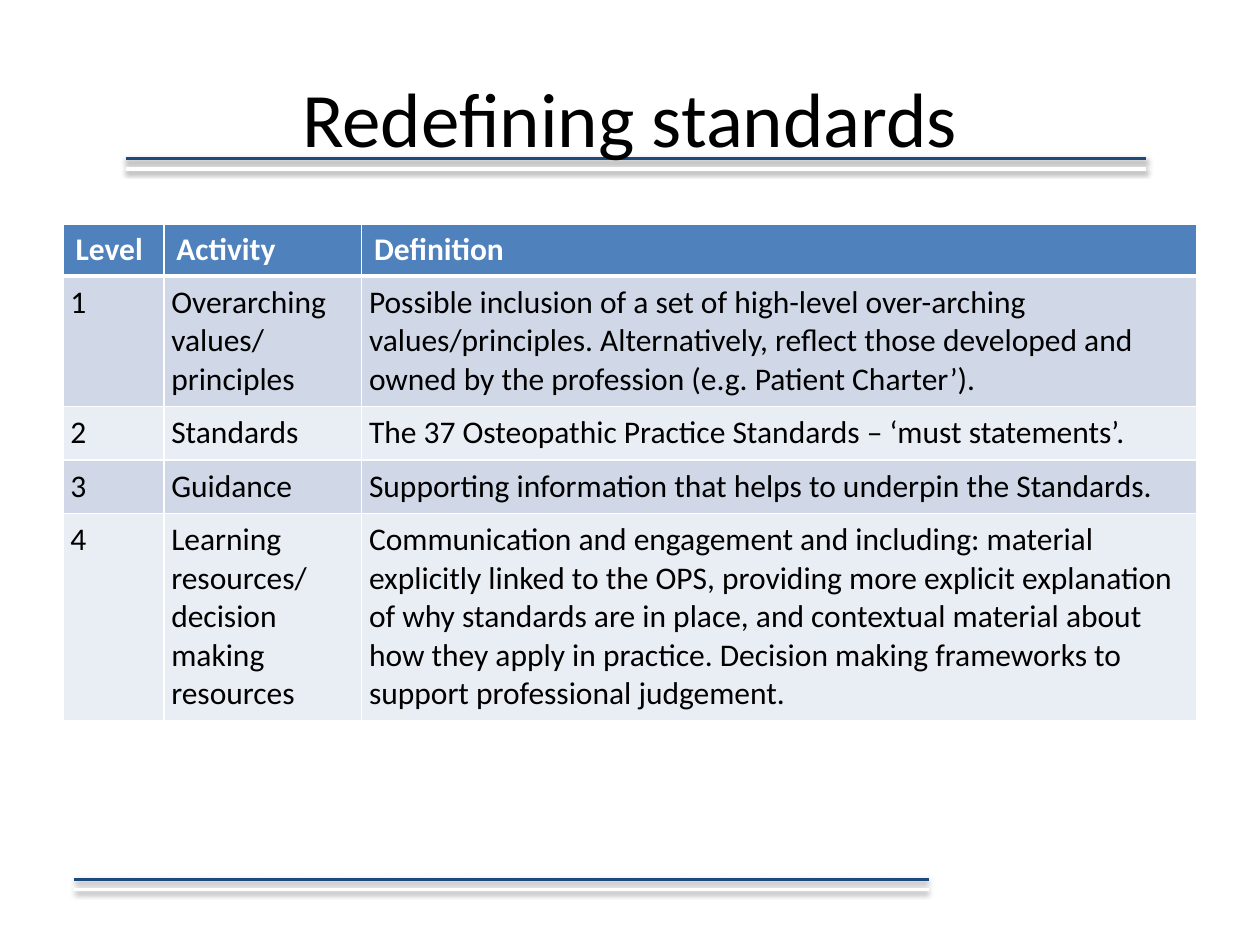
from pptx import Presentation
from pptx.dml.color import RGBColor
from pptx.enum.shapes import MSO_CONNECTOR
from pptx.enum.text import MSO_ANCHOR, PP_ALIGN
from pptx.oxml import parse_xml
from pptx.oxml.ns import nsdecls
from pptx.util import Pt

COLORS = {
    "navy": "1F497D",
    "header": "4F81BD",
    "odd_row": "D0D8E8",
    "even_row": "E9EDF4",
    "white": "FFFFFF",
    "black": "000000",
}
FONT = "Calibri"
RULE_GAP = 5.8
COLUMN_WIDTHS = [57.6, 113, 477.4]
ROW_HEIGHTS = [29.5, 74, 30, 30, 116]
ROWS = [
    ["Level", "Activity", "Definition"],
    ["1", "Overarching values/\nprinciples",
     "Possible inclusion of a set of high-level over-arching values/principles. "
     "Alternatively, reflect those developed and owned by the profession "
     "(e.g. Patient Charter’)."],
    ["2", "Standards", "The 37 Osteopathic Practice Standards – ‘must statements’."],
    ["3", "Guidance", "Supporting information that helps to underpin the Standards."],
    ["4", "Learning resources/ decision making resources",
     "Communication and engagement and including: material explicitly linked to "
     "the OPS, providing more explicit explanation of why standards are in place, "
     "and contextual material about how they apply in practice. Decision making "
     "frameworks to support professional judgement."],
]


def rgb(name):
    return RGBColor.from_string(COLORS[name])


def set_font(p, size, color, bold=False):
    p.font.name = FONT
    p.font.size = Pt(size)
    p.font.bold = bold
    p.font.color.rgb = rgb(color)


def add_rule(s, left, right, y, color):
    line = s.shapes.add_connector(
        MSO_CONNECTOR.STRAIGHT, Pt(left), Pt(y), Pt(right), Pt(y))
    line.line.color.rgb = rgb(color)
    line.line.width = Pt(2)
    line.element.spPr.append(parse_xml(
        f'<a:effectLst {nsdecls("a")}>'
        f'<a:outerShdw blurRad="{Pt(3.1)}" dist="{Pt(1.6)}" dir="5400000" rotWithShape="0">'
        f'<a:srgbClr val="{COLORS["black"]}"><a:alpha val="38000"/></a:srgbClr>'
        '</a:outerShdw></a:effectLst>'))


def add_double_rule(s, left, right, y):
    add_rule(s, left, right, y, "navy")
    add_rule(s, left, right, y + RULE_GAP, "white")


def add_title(s, text):
    title = s.shapes.title
    title.left, title.top, title.width, title.height = Pt(36), Pt(21.6), Pt(648), Pt(90)
    tf = title.text_frame
    tf.vertical_anchor = MSO_ANCHOR.MIDDLE
    p = tf.paragraphs[0]
    p.text = text
    p.alignment = PP_ALIGN.CENTER
    set_font(p, 44, "black")
    title.element.getparent().append(title.element)


def set_borders(cell, top, bottom):
    for side, width in (("L", 1), ("R", 1), ("T", top), ("B", bottom)):
        cell._tc.get_or_add_tcPr().append(parse_xml(
            f'<a:ln{side} {nsdecls("a")} w="{Pt(width)}"><a:solidFill>'
            f'<a:srgbClr val="{COLORS["white"]}"/></a:solidFill></a:ln{side}>'))


def format_cell(cell, text, row):
    is_header = row == 0
    set_borders(cell, 3 if row == 1 else 1, 3 if is_header else 1)
    cell.fill.solid()
    cell.fill.fore_color.rgb = rgb(
        "header" if is_header else "odd_row" if row % 2 else "even_row")
    p = cell.text_frame.paragraphs[0]
    p.text = text
    set_font(p, 18, "white" if is_header else "black", is_header)
    if not is_header:
        p.space_after = Pt(3)
        cell.margin_left = cell.margin_right = Pt(4.3)
        cell.margin_top = cell.margin_bottom = Pt(4.3)


def add_standards_table(s):
    table = s.shapes.add_table(
        len(ROWS), len(COLUMN_WIDTHS), Pt(36), Pt(128.2),
        Pt(sum(COLUMN_WIDTHS)), Pt(sum(ROW_HEIGHTS))).table
    for column, width in zip(table.columns, COLUMN_WIDTHS):
        column.width = Pt(width)
    for i, (height, texts) in enumerate(zip(ROW_HEIGHTS, ROWS)):
        table.rows[i].height = Pt(height)
        for j, text in enumerate(texts):
            format_cell(table.cell(i, j), text, i)


def main():
    prs = Presentation()
    prs.slide_width, prs.slide_height = Pt(720), Pt(540)
    s = prs.slides.add_slide(prs.slide_layouts[5])
    add_double_rule(s, 72, 655, 90.7)
    add_double_rule(s, 42.5, 530.6, 502.6)
    add_title(s, "Redefining standards")
    add_standards_table(s)
    prs.save("out.pptx")


if __name__ == "__main__":
    main()
